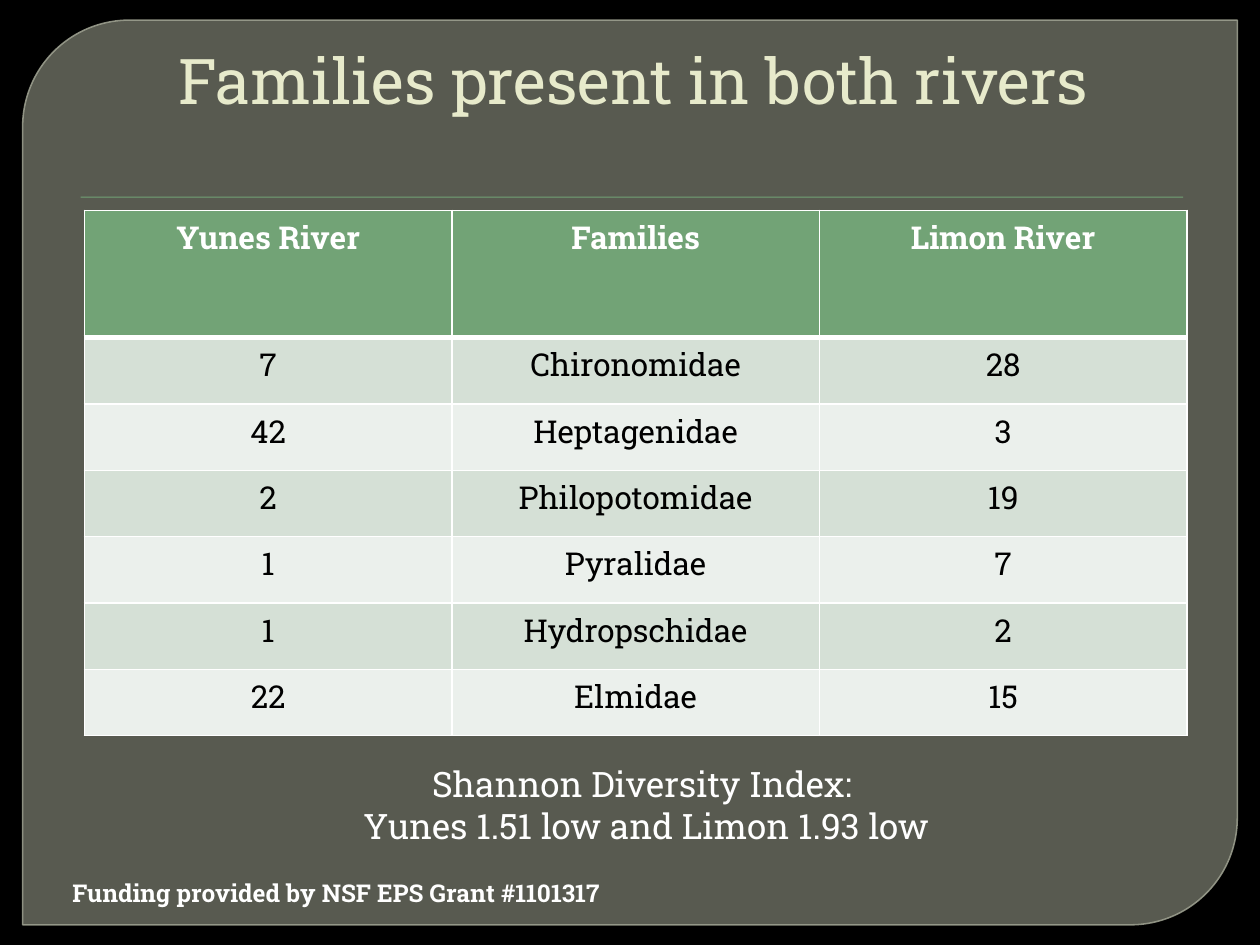
from dataclasses import dataclass

from lxml.etree import SubElement
from pptx import Presentation
from pptx.dml.color import RGBColor
from pptx.enum.shapes import MSO_SHAPE
from pptx.enum.text import PP_ALIGN
from pptx.oxml.ns import qn
from pptx.util import Inches, Pt

FONT = "Roboto Slab"
WHITE, BLACK, GREEN = "FFFFFF", "000000", "72A376"
BAND_COLOURS = ("D5E0D6", "EBF0EC")


@dataclass
class Label:
    text: str
    left: float
    top: float
    width: float
    height: float
    size: float
    colour: str = WHITE
    bold: bool = False
    alignment: PP_ALIGN = PP_ALIGN.CENTER
    indent: float = 0


LABELS = [
    Label("Families present in both rivers", 0.5, 0.28, 9, 1.14, 36, "E7EACB", indent=0.06),
    Label("Funding provided by NSF EPS Grant #1101317", 0.25, 6.92, 4.61, 0.3, 14,
          bold=True, alignment=PP_ALIGN.RIGHT),
    Label("Shannon Diversity Index: \vYunes 1.51 low and Limon 1.93 low",
          1.92, 6, 6.42, 0.77, 20),
]

FAMILY_ROWS = [
    ("Yunes River", "Families", "Limon River"),
    ("7", "Chironomidae", "28"),
    ("42", "Heptagenidae", "3"),
    ("2", "Philopotomidae", "19"),
    ("1", "Pyralidae", "7"),
    ("1", "Hydropschidae", "2"),
    ("22", "Elmidae", "15"),
]


def rgb(colour: str) -> RGBColor:
    return RGBColor.from_string(colour)


def set_fill(target, colour: str) -> None:
    target.fill.solid()
    target.fill.fore_color.rgb = rgb(colour)


def format_paragraph(paragraph, size: float, colour: str, bold: bool,
                     alignment: PP_ALIGN) -> None:
    paragraph.alignment = alignment
    for run in paragraph.runs:
        run.font.name = FONT
        run.font.size = Pt(size)
        run.font.bold = bold
        run.font.color.rgb = rgb(colour)


def add_label(slide, label: Label) -> None:
    shape = slide.shapes.add_textbox(Inches(label.left), Inches(label.top),
                                     Inches(label.width), Inches(label.height))
    shape.text_frame.word_wrap = True
    paragraph = shape.text_frame.paragraphs[0]
    paragraph.text = label.text
    format_paragraph(paragraph, label.size, label.colour, label.bold, label.alignment)
    if label.indent:
        paragraph._p.get_or_add_pPr().set("marL", str(Inches(label.indent)))


def set_opacity(element, percent: int) -> None:
    for colour in element.iter(qn("a:srgbClr")):
        SubElement(colour, qn("a:alpha"), val=str(percent * 1000))


def add_panel(slide) -> None:
    panel = slide.shapes.add_shape(MSO_SHAPE.ROUND_2_DIAG_RECTANGLE, Inches(0.18),
                                   Inches(0.16), Inches(9.64), Inches(7.18))
    panel.adjustments[0] = 0.118
    panel.adjustments[1] = 0
    panel.shadow.inherit = False
    set_fill(panel, "888B7B")
    set_opacity(panel._element.spPr.find(qn("a:solidFill")), 65)
    panel.line.color.rgb = rgb("9DA090")
    panel.line.width = Pt(0.87)
    set_opacity(panel.line._ln, 88)


def add_title_rule(slide) -> None:
    rule = slide.shapes.add_shape(MSO_SHAPE.RECTANGLE, Inches(0.64), Inches(1.56),
                                  Inches(8.75), Inches(0.01))
    set_fill(rule, GREEN)
    rule.line.fill.background()
    rule.shadow.inherit = False
    effects = rule._element.spPr.find(qn("a:effectLst"))
    shadow = SubElement(effects, qn("a:outerShdw"), blurRad=str(Pt(1)),
                        dist=str(Pt(1)), dir="5400000")
    SubElement(shadow, qn("a:srgbClr"), val=BLACK)
    set_opacity(shadow, 75)


def set_borders(cell, top: float, bottom: float) -> None:
    properties = cell._tc.get_or_add_tcPr()
    for side, width in (("L", 1), ("R", 1), ("T", top), ("B", bottom)):
        border = SubElement(properties, qn(f"a:ln{side}"), w=str(Pt(width)))
        fill = SubElement(border, qn("a:solidFill"))
        SubElement(fill, qn("a:srgbClr"), val=WHITE)


def add_family_table(slide) -> None:
    row_count, column_count = len(FAMILY_ROWS), len(FAMILY_ROWS[0])
    table = slide.shapes.add_table(row_count, column_count, Inches(0.67), Inches(1.67),
                                   Inches(8.75), Inches(4.17)).table
    for column in table.columns:
        column.width = Inches(8.75 / column_count)
    for row_index, values in enumerate(FAMILY_ROWS):
        header = row_index == 0
        table.rows[row_index].height = Inches(1.01 if header else 3.16 / (row_count - 1))
        for column_index, value in enumerate(values):
            cell = table.cell(row_index, column_index)
            # Borders come before the fill in the cell properties
            set_borders(cell, top=3 if row_index == 1 else 1, bottom=3 if header else 1)
            set_fill(cell, GREEN if header else BAND_COLOURS[(row_index - 1) % 2])
            cell.text_frame.text = value
            format_paragraph(cell.text_frame.paragraphs[0], 18,
                             WHITE if header else BLACK, header, PP_ALIGN.CENTER)


def main() -> None:
    presentation = Presentation()
    presentation.slide_width = Inches(10)
    presentation.slide_height = Inches(7.5)
    slide = presentation.slides.add_slide(presentation.slide_layouts[6])

    # Background panel and rule under the title
    set_fill(slide.background, BLACK)
    add_panel(slide)
    add_title_rule(slide)

    # Family counts
    add_family_table(slide)

    # Title, funding note and diversity index
    for label in LABELS:
        add_label(slide, label)

    presentation.save("out.pptx")


if __name__ == "__main__":
    main()
